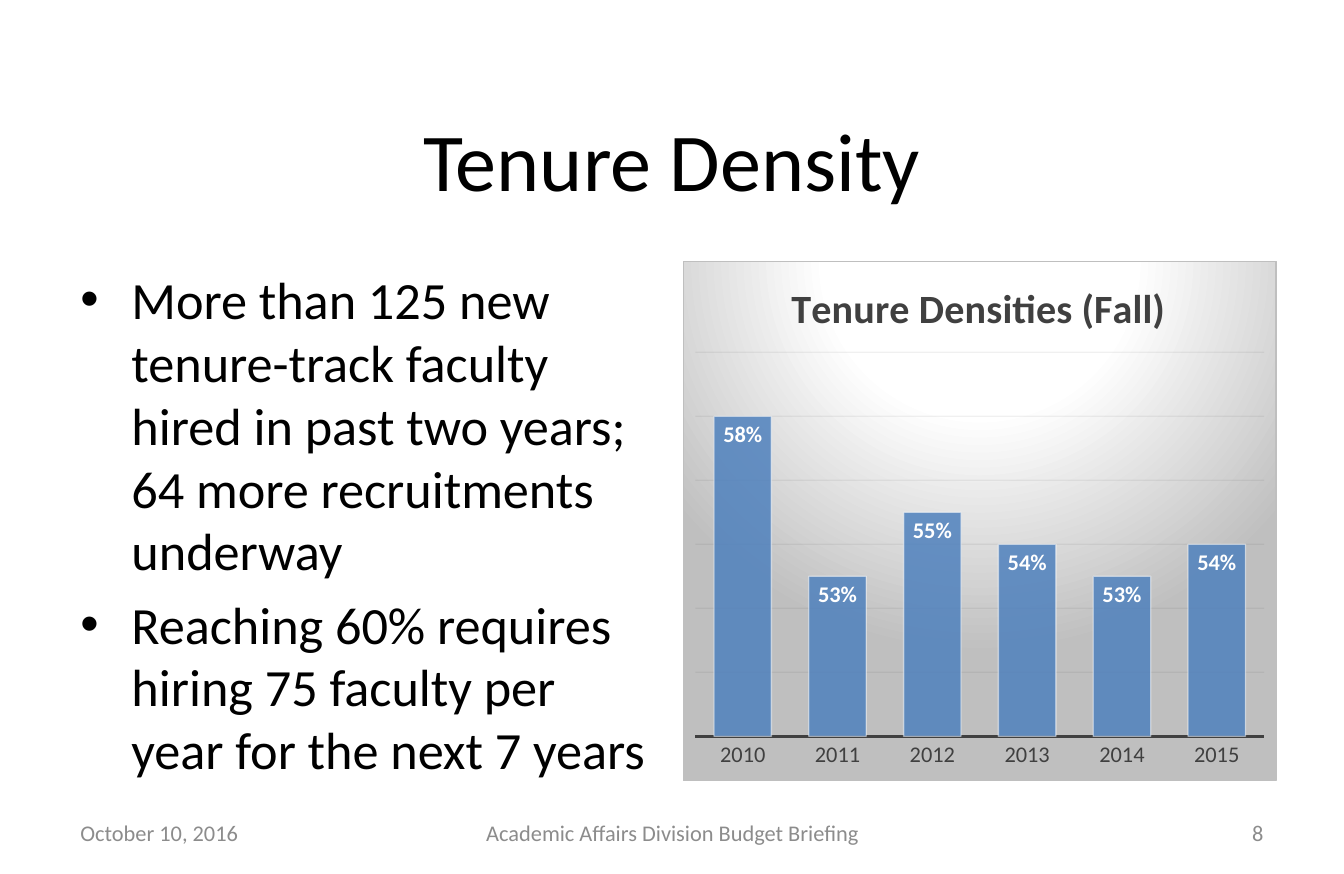
from lxml.etree import SubElement
from pptx import Presentation
from pptx.chart.data import CategoryChartData
from pptx.dml.color import RGBColor
from pptx.enum.chart import XL_CHART_TYPE as Kind, XL_LABEL_POSITION as Spot
from pptx.enum.chart import XL_TICK_MARK as Tick
from pptx.enum.text import MSO_ANCHOR as Anchor, PP_ALIGN as Align
from pptx.oxml import parse_xml
from pptx.oxml.ns import nsdecls, qn
from pptx.util import Inches, Pt

FONT = "Calibri"
BLACK = RGBColor(0, 0, 0)
WHITE = RGBColor(255, 255, 255)
GRAY = RGBColor(0x8C, 0x8C, 0x8C)
DARK = RGBColor(0x40, 0x40, 0x40)
GRID = RGBColor(0x0D, 0x0D, 0x0D)
BLUE = RGBColor(0x4F, 0x81, 0xBD)

TITLE = "Tenure Density"
POINTS = [
    "More than 125 new tenure-track faculty hired in past two years; "
    "64 more recruitments underway",
    "Reaching 60% requires hiring 75 faculty per year for the next 7 years",
]
FOOTER = [  # text, left, width, alignment
    ("October 10, 2016", 0.5, 2.33, Align.LEFT),
    ("Academic Affairs Division Budget Briefing", 3.42, 3.17, Align.CENTER),
    ("8", 7.17, 2.33, Align.RIGHT),
]
CHART_TITLE = "Tenure Densities (Fall)"
DENSITY = {"2010": 0.58, "2011": 0.53, "2012": 0.55,
           "2013": 0.54, "2014": 0.53, "2015": 0.54}
HEAD = {"x": 0.17, "y": 0.02}
PLOT = {"x": 0.02, "y": 0.175, "w": 0.96, "h": 0.74}

TOP, WIDE, HIGH = 1.94, 4.42, 3.87
LEFT, RIGHT = 0.5, 5.08

BACK = f"""<c:spPr {nsdecls('c', 'a')}>
  <a:gradFill><a:gsLst>
    <a:gs pos="0"><a:srgbClr val="FFFFFF"/></a:gs>
    <a:gs pos="39000"><a:srgbClr val="FFFFFF"/></a:gs>
    <a:gs pos="100000"><a:srgbClr val="BFBFBF"/></a:gs>
  </a:gsLst><a:path path="circle">
    <a:fillToRect l="50000" t="-80000" r="50000" b="180000"/>
  </a:path></a:gradFill>
  <a:ln w="9525"><a:solidFill><a:srgbClr val="BFBFBF"/></a:solidFill></a:ln>
</c:spPr>"""


def style(font, size, color, bold=False):
    font.name, font.size, font.bold = FONT, Pt(size), bold
    font.color.rgb = color


def fade(node, *alphas):
    """Give the colours under node, in order, their opacity in percent."""
    for color, alpha in zip(node.iter(qn("a:srgbClr")), alphas):
        SubElement(color, qn("a:alpha"), val=str(alpha * 1000))


def add_box(slide, x, y, w, h):
    box = slide.shapes.add_textbox(*map(Inches, (x, y, w, h)))
    box.text_frame.word_wrap = True
    return box.text_frame


def add_title(slide):
    title = slide.shapes.title
    title.left, title.top = Inches(LEFT), Inches(0.64)
    title.width, title.height = Inches(9), Inches(1.08)
    frame = title.text_frame
    frame.text = TITLE
    frame.vertical_anchor = Anchor.MIDDLE
    frame.paragraphs[0].alignment = Align.CENTER
    style(frame.paragraphs[0].font, 44, BLACK)


def add_points(slide):
    frame = add_box(slide, LEFT, TOP, WIDE, HIGH)
    frame.text = "\n".join(POINTS)
    for i, para in enumerate(frame.paragraphs):
        props = para._p.get_or_add_pPr()
        props.set("marL", str(Inches(0.38)))
        props.set("indent", str(-Inches(0.38)))
        SubElement(props, qn("a:buFont"), typeface="Arial")
        SubElement(props, qn("a:buChar"), char="•")
        if i:
            para.space_before = Pt(5.6)
        style(para.font, 28, BLACK)


def add_footer(slide):
    for text, x, w, align in FOOTER:
        frame = add_box(slide, x, 6.02, w, 0.35)
        frame.text = text
        frame.vertical_anchor = Anchor.MIDDLE
        frame.paragraphs[0].alignment = align
        style(frame.paragraphs[0].font, 12, GRAY)


def style_axes(chart):
    years = chart.category_axis
    years.major_tick_mark = Tick.NONE
    years.format.line.color.rgb = DARK
    years.format.line.width = Pt(1.5)
    style(years.tick_labels.font, 12, DARK)

    scale = chart.value_axis
    scale.minimum_scale, scale.maximum_scale = 0.48, 0.6
    scale.major_unit = 0.02
    scale.tick_labels.number_format = "0%"
    scale.tick_labels.number_format_is_linked = False
    scale.visible = False
    line = scale.major_gridlines.format.line
    line.color.rgb, line.width = GRID, Pt(0.75)
    fade(scale._element.find(qn("c:majorGridlines")), 5)


def style_bars(plot):
    plot.gap_width = 65
    plot.vary_by_categories = False
    bars = plot.series[0]
    bars.format.fill.solid()
    bars.format.fill.fore_color.rgb = BLUE
    bars.format.line.color.rgb = WHITE
    bars.format.line.width = Pt(0.75)
    fade(bars._element.find(qn("c:spPr")), 85, 50)

    labels = bars.data_labels
    labels.show_value = True
    labels.number_format, labels.number_format_is_linked = "0%", False
    labels.position = Spot.INSIDE_END
    style(labels.font, 12, WHITE, True)


def place(node, parts, inner=False):
    """Fix the spot of a chart part, in fractions of the chart."""
    old = node.find(qn("c:layout"))
    if old is not None:
        node.remove(old)
    layout = parse_xml(f"<c:layout {nsdecls('c')}><c:manualLayout/></c:layout>")
    manual = layout[0]
    if inner:
        SubElement(manual, qn("c:layoutTarget"), val="inner")
    for key in "xy":
        SubElement(manual, qn(f"c:{key}Mode"), val="edge")
    for key, part in parts.items():
        SubElement(manual, qn(f"c:{key}"), val=str(part))
    text = node.find(qn("c:tx"))
    if text is None:
        node.insert(0, layout)
    else:
        text.addnext(layout)


def add_chart(slide):
    data = CategoryChartData(number_format="0%")
    data.categories = list(DENSITY)
    data.add_series("Series 1", list(DENSITY.values()))
    spot = map(Inches, (RIGHT, TOP, WIDE, HIGH))
    chart = slide.shapes.add_chart(Kind.COLUMN_CLUSTERED, *spot, data).chart
    style(chart.font, 10, BLACK)
    chart.has_legend = False
    chart.has_title = True
    frame = chart.chart_title.text_frame
    frame.text = CHART_TITLE
    style(frame.paragraphs[0].font, 21.6, DARK, True)
    style_axes(chart)
    style_bars(chart.plots[0])

    body = chart._chartSpace.find(qn("c:chart"))
    place(body.find(qn("c:title")), HEAD)
    place(body.find(qn("c:plotArea")), PLOT, inner=True)
    body.addnext(parse_xml(BACK))


def main():
    deck = Presentation()
    deck.slide_width, deck.slide_height = Inches(10), Inches(6.5)
    slide = deck.slides.add_slide(deck.slide_layouts[5])
    add_title(slide)
    add_points(slide)
    add_footer(slide)
    add_chart(slide)
    deck.save("out.pptx")


if __name__ == "__main__":
    main()
